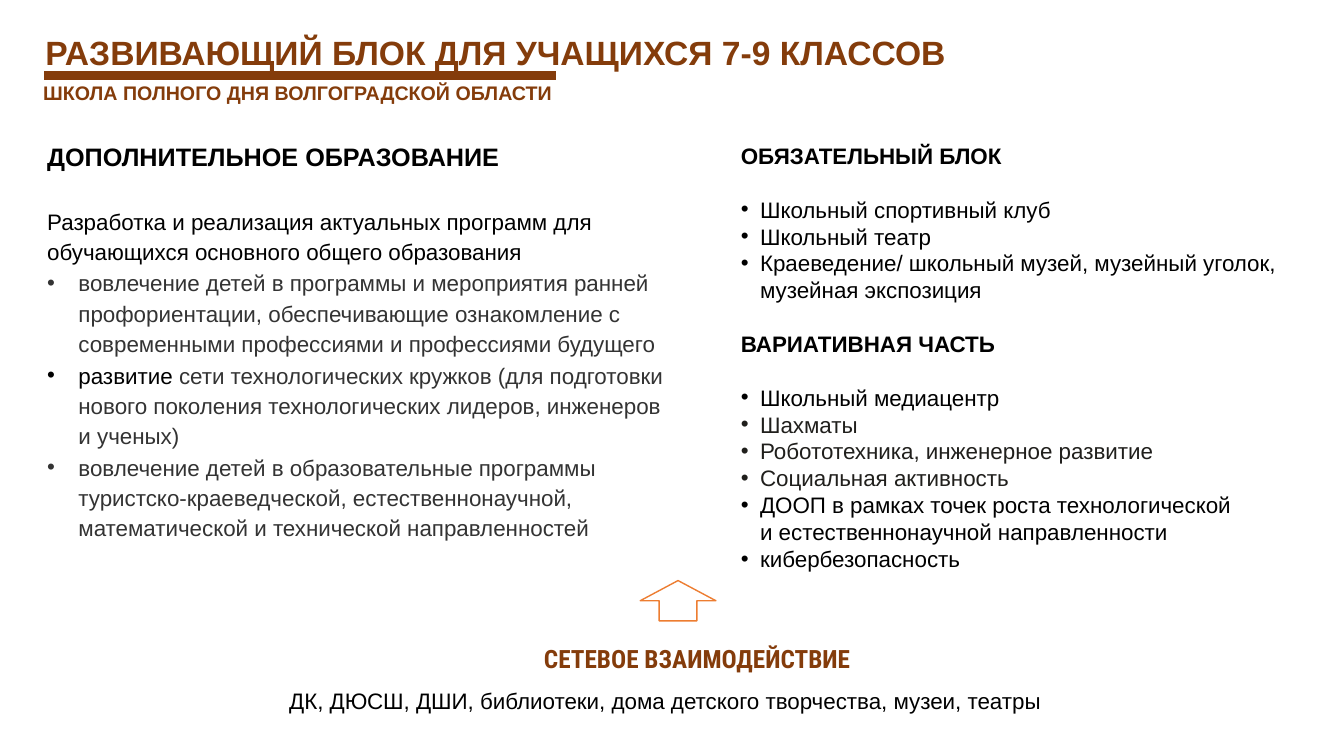
from pptx import Presentation
from pptx.dml.color import RGBColor
from pptx.enum import shapes, text
from pptx.oxml.ns import qn
from pptx.util import Inches, Pt
from lxml import etree

COLORS = {"brown": "843C0B", "black": "000000", "gray": "333333",
          "dark": "201F1C", "orange": "ED7D31", "white": "FFFFFF"}

TITLE = "РАЗВИВАЮЩИЙ БЛОК ДЛЯ УЧАЩИХСЯ 7-9 КЛАССОВ"
SUBTITLE = "ШКОЛА ПОЛНОГО ДНЯ ВОЛГОГРАДСКОЙ ОБЛАСТИ"
NETWORK = "СЕТЕВОЕ ВЗАИМОДЕЙСТВИЕ"
PARTNERS = "ДК, ДЮСШ, ДШИ, библиотеки, дома детского творчества, музеи, театры"

# Column paragraphs: (style, [(text, color), ...])
EXTRA_EDUCATION = [
    ("heading", [("ДОПОЛНИТЕЛЬНОЕ ОБРАЗОВАНИЕ", "black")]),
    ("plain", [("Разработка и реализация актуальных программ для "
                "обучающихся основного общего образования", "black")]),
    ("bullet", [("вовлечение детей в программы и мероприятия ранней "
                 "профориентации, обеспечивающие ознакомление с современными "
                 "профессиями и профессиями будущего", "gray")]),
    ("bullet", [("развитие ", "black"),
                ("сети технологических кружков (для подготовки нового поколения "
                 "технологических лидеров, инженеров \nи ученых)", "gray")]),
    ("bullet", [("вовлечение детей в образовательные программы "
                 "туристско-краеведческой, естественнонаучной, "
                 "математической и технической направленностей", "gray")]),
]
BLOCKS = [
    ("heading", [("ОБЯЗАТЕЛЬНЫЙ БЛОК", "black")]),
    ("bullet", [("Школьный спортивный клуб", "black")]),
    ("bullet", [("Школьный театр", "black")]),
    ("bullet", [("Краеведение/ школьный музей, музейный уголок, "
                 "музейная экспозиция", "black")]),
    ("heading", [("ВАРИАТИВНАЯ ЧАСТЬ", "black")]),
    ("bullet", [("Школьный медиацентр", "black")]),
    ("bullet", [("Шахматы", "dark")]),
    ("bullet", [("Робототехника, инженерное развитие", "dark")]),
    ("bullet", [("Социальная активность", "dark")]),
    ("bullet", [("ДООП в рамках точек роста технологической \n"
                 "и естественнонаучной направленности", "black")]),
    ("bullet", [("кибербезопасность", "black")]),
]

presentation = Presentation()
presentation.slide_width, presentation.slide_height = Inches(13.33), Inches(7.5)
slide = presentation.slides.add_slide(presentation.slide_layouts[6])


def rgb(name):
    return RGBColor.from_string(COLORS[name])


def add_frame(left, top, width, height, wrap=True):
    box = slide.shapes.add_textbox(*map(Inches, (left, top, width, height)))
    box.text_frame.word_wrap = wrap
    return box.text_frame


def add_label(content, place, size, color, bold=True, font="Arial",
              align=text.PP_ALIGN.LEFT, spacing=None, wrap=True):
    frame = add_frame(*place, wrap=wrap)
    paragraph = frame.paragraphs[0]
    paragraph.text = content
    paragraph.alignment = align
    paragraph.line_spacing = spacing
    paragraph.font.name, paragraph.font.size = font, Pt(size)
    paragraph.font.bold = bold
    paragraph.font.color.rgb = rgb(color)
    return frame


def add_bullet(paragraph, indent):
    properties = paragraph._p.get_or_add_pPr()
    properties.set("marL", str(Inches(indent)))
    properties.set("indent", str(-Inches(indent)))
    etree.SubElement(properties, qn("a:buFont")).set("typeface", "Arial")
    etree.SubElement(properties, qn("a:buChar")).set("char", "•")


def add_column(paragraphs, place, heading_size, line, before, indent):
    frame = add_frame(*place)
    previous = None
    for index, (style, runs) in enumerate(paragraphs):
        paragraph = frame.paragraphs[0] if index == 0 else frame.add_paragraph()
        heading = style == "heading"
        # One empty line above and below every heading
        gap = line + before if index and (heading or previous == "heading") else 0
        paragraph.line_spacing = Pt(line)
        paragraph.space_before = Pt(before + gap)
        if style == "bullet":
            add_bullet(paragraph, indent)
        paragraph.font.name = "Arial"
        paragraph.font.size = Pt(heading_size if heading else 16)
        paragraph.font.bold = heading
        for content, color in runs:
            for number, part in enumerate(content.split("\n")):
                if number:
                    paragraph.add_line_break()
                run = paragraph.add_run()
                run.text = part
                run.font.color.rgb = rgb(color)
        previous = style


# Title, rule and subtitle
title = add_label(TITLE, (0.04, 0.12, 9.75, 0.85), 24, "brown",
                  align=text.PP_ALIGN.CENTER, spacing=0.9)
title.vertical_anchor = text.MSO_ANCHOR.MIDDLE
rule = slide.shapes.add_connector(shapes.MSO_CONNECTOR.STRAIGHT, Inches(0.44),
                                  Inches(0.75), Inches(5.51), Inches(0.75))
rule.line.color.rgb = rgb("brown")
rule.line.width = Pt(6)
etree.SubElement(rule._element.spPr, qn("a:effectLst"))
add_label(SUBTITLE, (0.33, 0.75, 5.29, 0.34), 14, "brown", wrap=False)

# Two columns
add_column(EXTRA_EDUCATION, (0.37, 1.35, 6.67, 4.18), 18, 21.6, 1, 0.31)
add_column(BLOCKS, (7.25, 1.36, 5.92, 4.41), 16, 19.2, 0, 0.19)

# Arrow and network partners
arrow = slide.shapes.add_shape(shapes.MSO_SHAPE.UP_ARROW, Inches(6.35),
                               Inches(5.76), Inches(0.75), Inches(0.4))
arrow.shadow.inherit = False
arrow.fill.solid()
arrow.fill.fore_color.rgb = rgb("white")
arrow.line.color.rgb = rgb("orange")
arrow.line.width = Pt(1)
add_label(NETWORK, (3.08, 6.33, 7.67, 0.41), 18, "brown", font="Roboto Condensed",
          align=text.PP_ALIGN.CENTER, spacing=Pt(21.6))
add_label(PARTNERS, (2.77, 6.77, 8.06, 0.37), 16, "black", bold=False)

presentation.save("out.pptx")
